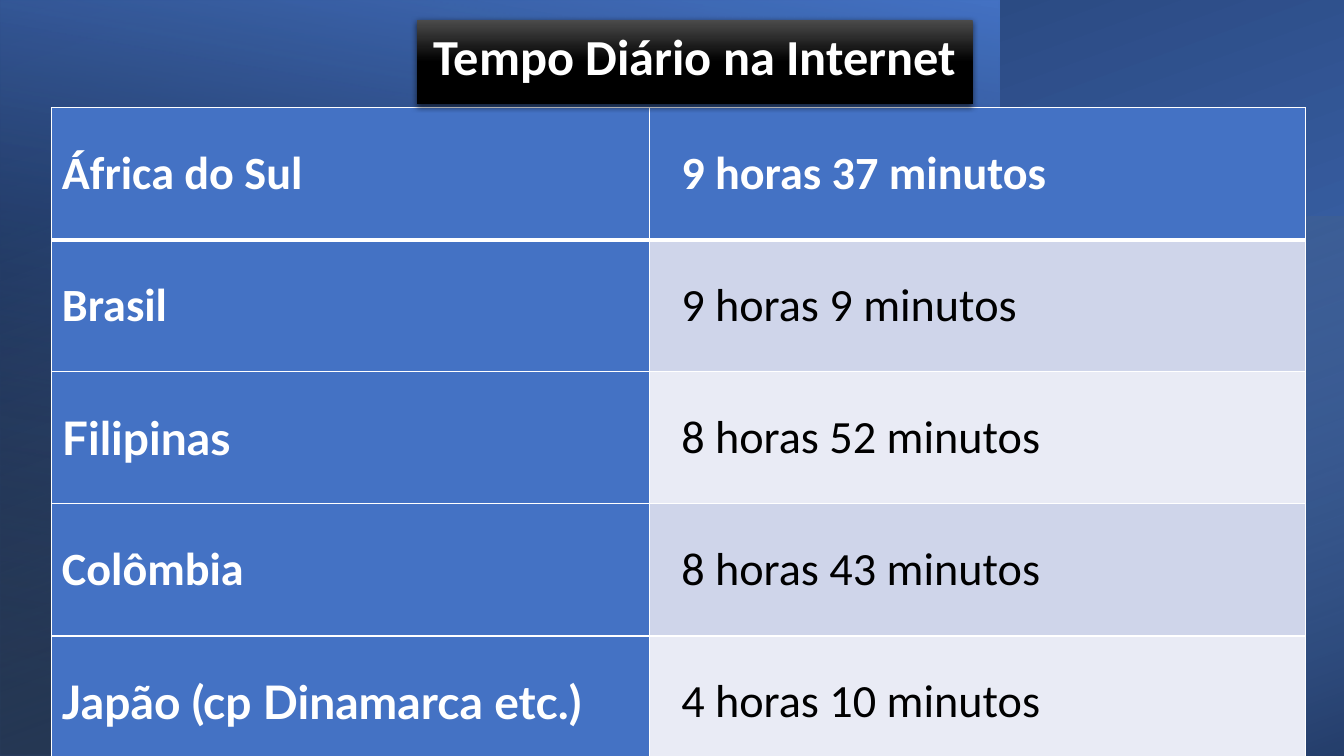
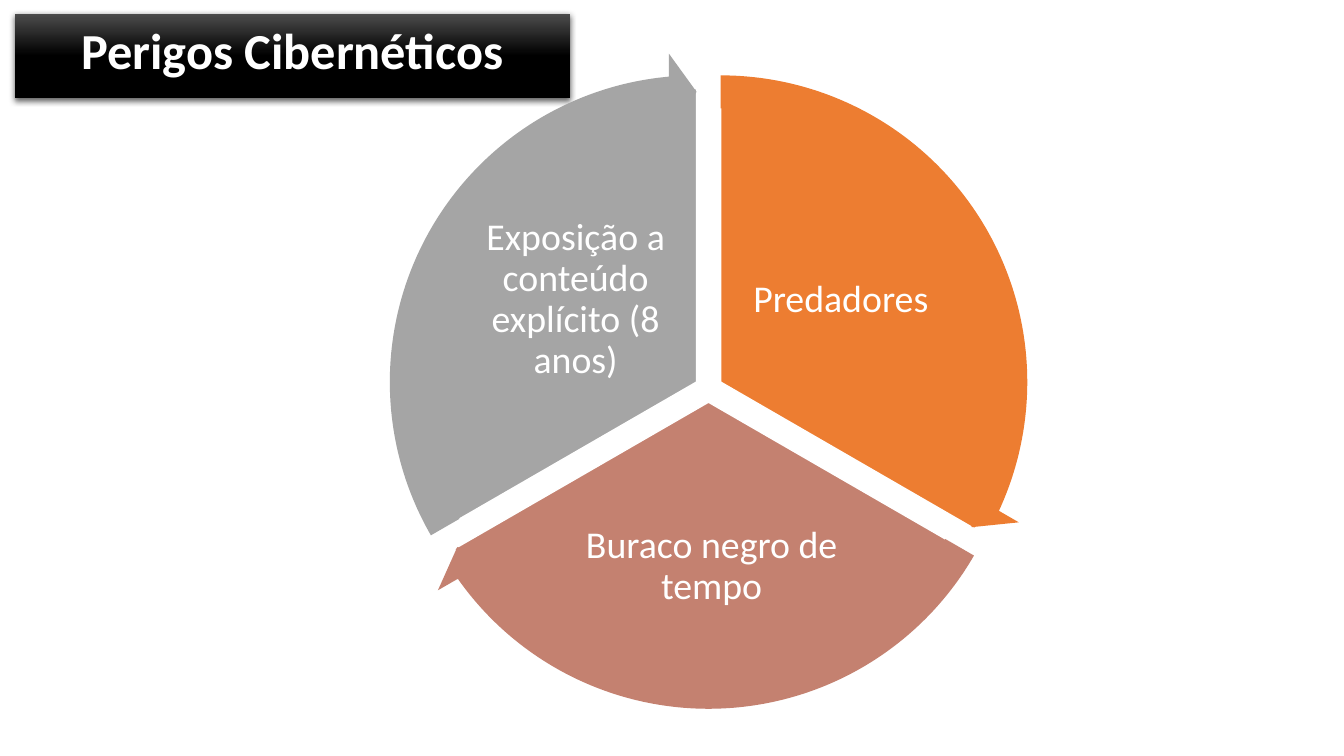
"""Build two slides: daily internet time by country and cyber dangers."""
import dataclasses
import typing

import lxml.etree
import pptx
import pptx.dml.color
import pptx.enum.shapes
import pptx.enum.text
import pptx.oxml.ns
import pptx.presentation
import pptx.shapes.base
import pptx.slide
import pptx.table
import pptx.text.text
import pptx.util

Pt = pptx.util.Pt
RGBColor = pptx.dml.color.RGBColor
Shape = pptx.enum.shapes.MSO_SHAPE
Align = pptx.enum.text.PP_ALIGN
Anchor = pptx.enum.text.MSO_ANCHOR

WHITE = RGBColor(0xFF, 0xFF, 0xFF)
BLACK = RGBColor(0x00, 0x00, 0x00)
CHARCOAL = RGBColor(0x4B, 0x4B, 0x4B)
BLUE = RGBColor(0x44, 0x72, 0xC4)
NAVY = RGBColor(0x20, 0x38, 0x64)
SKY = RGBColor(0x9D, 0xC3, 0xE6)
BAND_DARK = RGBColor(0xCF, 0xD5, 0xEA)
BAND_LIGHT = RGBColor(0xE9, 0xEB, 0xF5)
ORANGE = RGBColor(0xED, 0x7D, 0x31)
ROSE = RGBColor(0xC4, 0x81, 0x70)
GRAY = RGBColor(0xA5, 0xA5, 0xA5)

BODY_FONT = "Calibri"
ACCENT_FONT = "Lato"
TITLE_ONLY = 5
PIE_SIZE = 419
ARROW_MARGIN = 26


class Stop(typing.NamedTuple):
    """A gradient stop, with position and opacity in percent."""

    position: int
    color: RGBColor
    opacity: int = 100


class Box(typing.NamedTuple):
    """A frame in points."""

    left: float
    top: float
    width: float
    height: float

    def lengths(self) -> list[pptx.util.Length]:
        """Return the frame as lengths."""
        return [Pt(value) for value in self]


@dataclasses.dataclass(frozen=True)
class Panel:
    """A gradient background rectangle."""

    box: Box
    rotation: int
    angle: int
    stops: tuple[Stop, ...]


@dataclasses.dataclass(frozen=True)
class CountryTime:
    """A country and its daily time online."""

    country: str
    time: str
    font: str = BODY_FONT


@dataclasses.dataclass(frozen=True)
class Sector:
    """A cycle sector with its arrow and label."""

    label: str
    color: RGBColor
    left: float
    top: float
    angles: tuple[float, float]
    arrow_angles: tuple[float, float]
    label_box: Box


TITLE_STOPS = (Stop(0, CHARCOAL), Stop(50, BLACK), Stop(100, BLACK))

PANELS = (
    Panel(Box(210, -210, 540, 960), 270, 200, (Stop(8, BLUE), Stop(100, NAVY))),
    Panel(Box(0, 0, 714, 540), 180, 80, (Stop(8, BLACK, 52), Stop(100, BLUE))),
    Panel(Box(287.5, -132.5, 385, 960), 270, 20, (Stop(0, SKY, 0), Stop(100, BLACK, 46))),
)

COUNTRY_TIMES = (
    CountryTime("África do Sul", "9 horas 37 minutos"),
    CountryTime("Brasil", "9 horas 9 minutos"),
    CountryTime("Filipinas", "8 horas 52 minutos", ACCENT_FONT),
    CountryTime("Colômbia", "8 horas 43 minutos"),
    CountryTime("Japão (cp Dinamarca etc.)", "4 horas 10 minutos", ACCENT_FONT),
)

SECTORS = (
    Sector("Predadores", ORANGE, 305.3, 63.4, (162, 18), (14.73, 161.99),
           Box(525.6, 152, 150, 124.5)),
    Sector("Buraco negro de tempo", ROSE, 296.6, 77.8, (18, 90), (86.72, 18.01),
           Box(396, 350, 224.6, 109.4)),
    Sector("Exposição a conteúdo explícito (8 anos)", GRAY, 288, 63.4, (90, 162), (158.73, 90),
           Box(336.2, 152, 150, 124.5)),
)


def add_element(parent: typing.Any, tag: str, **attributes: object) -> typing.Any:
    """Append a drawing element to its parent."""
    return lxml.etree.SubElement(
        parent, pptx.oxml.ns.qn(tag), {name: str(value) for name, value in attributes.items()}
    )


def add_color(parent: typing.Any, color: RGBColor, opacity: int = 100) -> None:
    """Append a colour with its opacity."""
    element = add_element(parent, "a:srgbClr", val=color)
    if opacity < 100:
        add_element(element, "a:alpha", val=opacity * 1000)


def fill_gradient(shape: pptx.shapes.base.BaseShape, stops: tuple[Stop, ...], angle: int) -> None:
    """Fill a shape with a linear gradient."""
    gradient = add_element(shape.element.spPr, "a:gradFill", rotWithShape=1)
    stop_list = add_element(gradient, "a:gsLst")
    for stop in stops:
        element = add_element(stop_list, "a:gs", pos=stop.position * 1000)
        add_color(element, stop.color, stop.opacity)
    add_element(gradient, "a:lin", ang=angle * 60000, scaled=0)


def write_text(
    text_frame: pptx.text.text.TextFrame,
    text: str,
    *,
    size: float,
    color: RGBColor = WHITE,
    bold: bool = False,
    font: str = BODY_FONT,
    align: Align = Align.CENTER,
    spacing: float = 1.0,
) -> None:
    """Write one formatted paragraph."""
    text_frame.text = text
    text_frame.word_wrap = True
    paragraph = text_frame.paragraphs[0]
    paragraph.alignment = align
    paragraph.line_spacing = spacing
    paragraph.font.name = font
    paragraph.font.size = Pt(size)
    paragraph.font.bold = bold
    paragraph.font.color.rgb = color


def add_titled_slide(
    presentation: pptx.presentation.Presentation, text: str, left: float, top: float
) -> pptx.slide.Slide:
    """Add a slide with the black title band."""
    slide = presentation.slides.add_slide(presentation.slide_layouts[TITLE_ONLY])
    title = slide.shapes.title
    title.left, title.top, title.width, title.height = Box(left, top, 396.7, 51).lengths()
    fill_gradient(title, TITLE_STOPS, 90)
    effects = add_element(title.element.spPr, "a:effectLst")
    shadow = add_element(
        effects, "a:outerShdw", blurRad=Pt(4.5), dist=Pt(1.5), dir=90 * 60000, rotWithShape=0
    )
    add_color(shadow, BLACK, 63)
    write_text(title.text_frame, text, size=36, bold=True)
    title.text_frame.vertical_anchor = Anchor.TOP
    title.text_frame.auto_size = pptx.enum.text.MSO_AUTO_SIZE.SHAPE_TO_FIT_TEXT
    return slide


def add_panel(slide: pptx.slide.Slide, panel: Panel) -> None:
    """Add a mirrored gradient panel."""
    shape = slide.shapes.add_shape(Shape.RECTANGLE, *panel.box.lengths())
    shape.rotation = panel.rotation
    shape.element.spPr.xfrm.set("flipH", "1")
    fill_gradient(shape, panel.stops, panel.angle)
    shape.line.fill.background()
    shape.shadow.inherit = False


def format_cell(
    cell: pptx.table._Cell, fill: RGBColor, left: float, right: float, top_line: int, bottom_line: int
) -> None:
    """Set the insets, borders and fill of a cell."""
    cell.margin_left, cell.margin_right = Pt(left), Pt(right)
    cell.margin_top = cell.margin_bottom = Pt(27)
    properties = cell._tc.get_or_add_tcPr()
    for side, width in zip("LRTB", (1, 1, top_line, bottom_line)):
        line = add_element(properties, f"a:ln{side}", w=Pt(width))
        add_color(add_element(line, "a:solidFill"), WHITE)
    cell.fill.solid()
    cell.fill.fore_color.rgb = fill


def add_time_table(slide: pptx.slide.Slide) -> None:
    """Add the table of daily time by country."""
    box = Box(36.8, 77, 896, 468)
    table = slide.shapes.add_table(len(COUNTRY_TIMES), 2, *box.lengths()).table
    table.columns[0].width, table.columns[1].width = Pt(427.4), Pt(468.6)
    table.horz_banding = False
    for row, entry in enumerate(COUNTRY_TIMES):
        header = row == 0
        top_line, bottom_line = (3 if row == 1 else 1), (3 if header else 1)
        band = BLUE if header else (BAND_DARK if row % 2 else BAND_LIGHT)
        country, time = table.cell(row, 0), table.cell(row, 1)
        format_cell(country, BLUE, 7.5, 22.5, top_line, bottom_line)
        format_cell(time, band, 22.5, 0, top_line, bottom_line)
        write_text(country.text_frame, entry.country, size=33, bold=True,
                   font=entry.font, align=Align.LEFT)
        write_text(time.text_frame, entry.time, size=33, bold=header,
                   color=WHITE if header else BLACK, align=Align.LEFT)


def add_cycle_shape(
    slide: pptx.slide.Slide, kind: Shape, box: Box, color: RGBColor, adjustments: tuple[float, ...]
) -> pptx.shapes.base.BaseShape:
    """Add a plain adjusted shape without an outline."""
    shape = slide.shapes.add_shape(kind, *box.lengths())
    for index, value in enumerate(adjustments):
        shape.adjustments[index] = value
    shape.fill.solid()
    shape.fill.fore_color.rgb = color
    shape.line.fill.background()
    shape.shadow.inherit = False
    return shape


def add_sector(slide: pptx.slide.Slide, sector: Sector) -> None:
    """Add a pie sector and its label."""
    box = Box(sector.left, sector.top, PIE_SIZE, PIE_SIZE)
    pie = add_cycle_shape(slide, Shape.PIE, box, sector.color, sector.angles)
    pie.line.color.rgb = WHITE
    pie.line.width = Pt(1)
    text_frame = slide.shapes.add_textbox(*sector.label_box.lengths()).text_frame
    text_frame.margin_left = text_frame.margin_right = Pt(2.7)
    text_frame.margin_top = text_frame.margin_bottom = Pt(2.7)
    text_frame.vertical_anchor = Anchor.MIDDLE
    write_text(text_frame, sector.label, size=27, spacing=0.9)


def add_sector_arrow(slide: pptx.slide.Slide, sector: Sector) -> None:
    """Add the circular arrow around a sector."""
    size = PIE_SIZE + 2 * ARROW_MARGIN
    box = Box(sector.left - ARROW_MARGIN, sector.top - ARROW_MARGIN, size, size)
    adjustments = (0.05, 3.28, *sector.arrow_angles, 0.06)
    add_cycle_shape(slide, Shape.CIRCULAR_ARROW, box, sector.color, adjustments)


def build_time_slide(presentation: pptx.presentation.Presentation) -> None:
    """Build the slide on daily internet time."""
    slide = add_titled_slide(presentation, "Tempo Diário na Internet", 298, 14.2)
    for panel in PANELS:
        add_panel(slide, panel)
    add_time_table(slide)
    title = slide.shapes.title.element
    title.getparent().append(title)


def build_danger_slide(presentation: pptx.presentation.Presentation) -> None:
    """Build the slide on cyber dangers."""
    slide = add_titled_slide(presentation, "Perigos Cibernéticos", 10.6, 10)
    for sector in SECTORS:
        add_sector(slide, sector)
    for sector in SECTORS:
        add_sector_arrow(slide, sector)


def main() -> None:
    """Build and save the presentation."""
    presentation = pptx.Presentation()
    presentation.slide_width, presentation.slide_height = Pt(960), Pt(540)
    build_time_slide(presentation)
    build_danger_slide(presentation)
    presentation.save("out.pptx")


if __name__ == "__main__":
    main()
